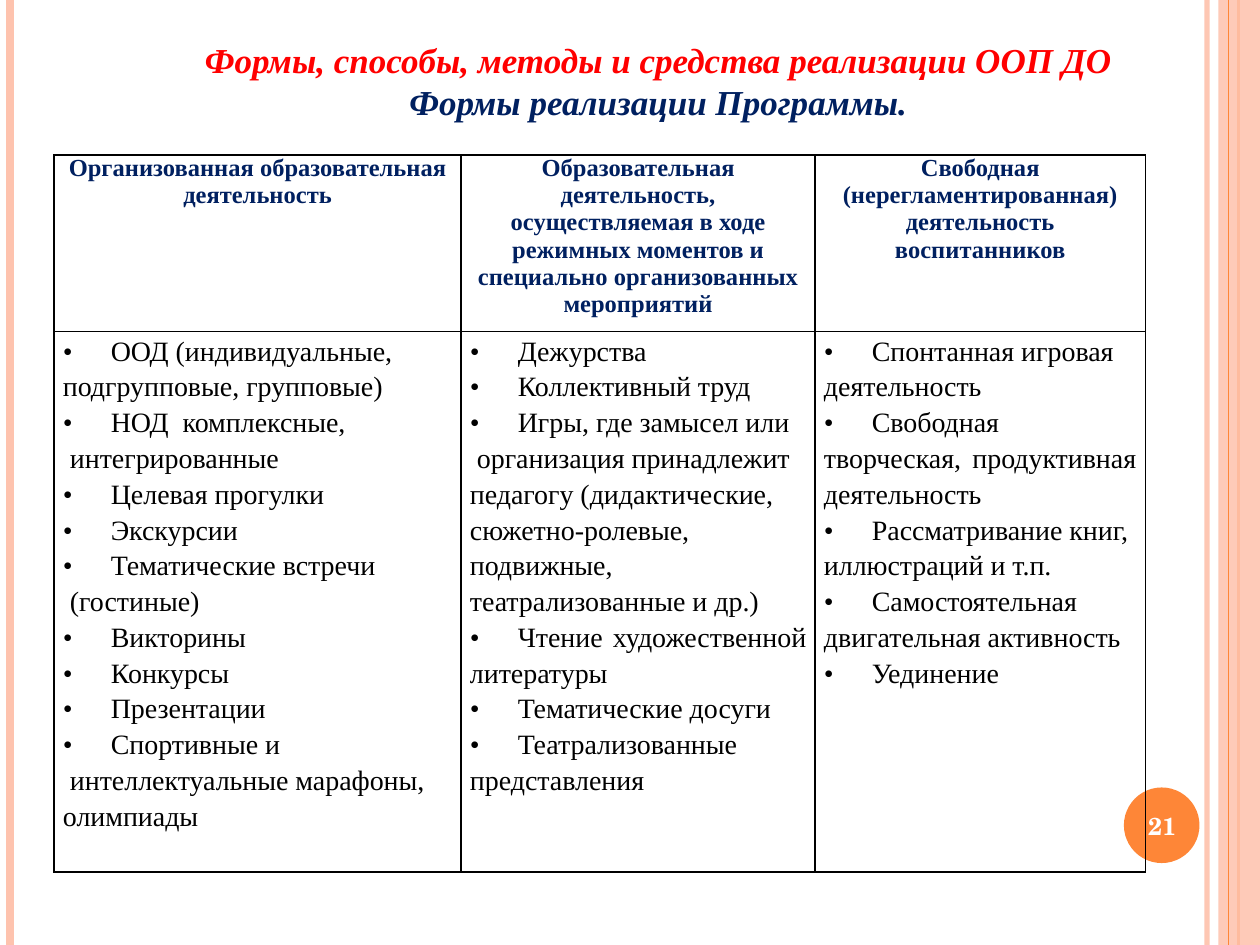
from lxml import etree
from pptx import Presentation
from pptx import util as u
from pptx.dml.color import RGBColor
from pptx.enum import shapes, text
from pptx.oxml import ns

PEACH = RGBColor(0xFE, 0xC3, 0xAE)
ORANGE = RGBColor(0xFE, 0x86, 0x37)
RED = RGBColor(0xFF, 0x00, 0x00)
NAVY = RGBColor(0x00, 0x20, 0x60)
BLACK = RGBColor(0x00, 0x00, 0x00)
WHITE = RGBColor(0xFF, 0xFF, 0xFF)
SERIF = "Times New Roman"
NUMBER_FONT = "TeX Gyre Schola"
BULLET = "• "

TITLE_LINES = [
    ("Формы, способы, методы и средства реализации ООП ДО", RED),
    ("Формы реализации Программы.", NAVY),
]
HEADERS = [
    "Организованная образовательная деятельность",
    "Образовательная деятельность, осуществляемая в ходе режимных моментов "
    "и специально организованных мероприятий",
    "Свободная (нерегламентированная) деятельность воспитанников",
]
# A line that starts with a bullet opens an item; the others continue it.
ACTIVITIES = [
    ["• ООД (индивидуальные,", "подгрупповые, групповые)",
     "• НОД  комплексные,", " интегрированные",
     "• Целевая прогулки", "• Экскурсии ",
     "• Тематические встречи", " (гостиные)",
     "• Викторины", "• Конкурсы", "• Презентации ",
     "• Спортивные и", " интеллектуальные марафоны,", "олимпиады "],
    ["• Дежурства ", "• Коллективный труд",
     "• Игры, где замысел или", " организация принадлежит",
     "педагогу (дидактические,", "сюжетно-ролевые,", "подвижные,",
     "театрализованные и др.)",
     "• Чтение художественной ", "литературы",
     "• Тематические досуги", "• Театрализованные", "представления"],
    ["• Спонтанная игровая ", "деятельность",
     "• Свободная ", "творческая, продуктивная ", "деятельность",
     "• Рассматривание книг, ", "иллюстраций и т.п.",
     "• Самостоятельная ", "двигательная активность",
     "• Уединение"],
]


def add_child(parent, tag, **attributes):
    return etree.SubElement(parent, ns.qn(tag), attributes)


def set_opacity(color_format_owner, percent):
    """Add an alpha value to the solid colour found inside an element."""
    color = color_format_owner.find(".//" + ns.qn("a:srgbClr"))
    add_child(color, "a:alpha", val=str(percent * 1000))


def set_hanging_indent(paragraph, bulleted):
    properties = paragraph._p.get_or_add_pPr()
    indent = u.Inches(0.38)
    properties.set("marL", str(indent))
    properties.set("indent", str(-indent))
    if bulleted:
        add_child(properties, "a:buFont", typeface=SERIF)
        add_child(properties, "a:buChar", char=BULLET.strip())
    else:
        add_child(properties, "a:buNone")


def set_borders(cell, color, width):
    properties = cell._tc.get_or_add_tcPr()
    for position, side in enumerate(("a:lnL", "a:lnR", "a:lnT", "a:lnB")):
        line = etree.Element(ns.qn(side), w=str(u.Pt(width)))
        add_child(add_child(line, "a:solidFill"), "a:srgbClr", val=str(color))
        properties.insert(position, line)


class SlideBuilder:
    def __init__(self, slide, font=SERIF):
        self.slide = slide
        self.font = font

    def run(self, paragraph, words, size, color, bold=False, italic=False, font=None):
        run = paragraph.add_run()
        run.text = words
        run.font.name = font or self.font
        run.font.size = u.Pt(size)
        run.font.color.rgb = color
        run.font.bold = bold
        run.font.italic = italic

    def title(self, lines, left, top, width, height):
        shape = self.slide.shapes.title
        shape.left, shape.top = u.Inches(left), u.Inches(top)
        shape.width, shape.height = u.Inches(width), u.Inches(height)
        frame = shape.text_frame
        frame.auto_size = text.MSO_AUTO_SIZE.NONE
        frame.vertical_anchor = text.MSO_ANCHOR.MIDDLE
        for index, (words, color) in enumerate(lines):
            paragraph = frame.add_paragraph() if index else frame.paragraphs[0]
            paragraph.alignment = text.PP_ALIGN.CENTER
            paragraph.space_before = u.Pt(0)
            self.run(paragraph, words, 20, color, bold=True, italic=True)

    def stripe(self, x, color, width, opacity=100):
        line = self.slide.shapes.add_connector(
            shapes.MSO_CONNECTOR.STRAIGHT, u.Inches(x), 0, u.Inches(x), u.Inches(7.5))
        line.line.color.rgb = color
        line.line.width = u.Pt(width)
        properties = line._element.spPr
        if opacity < 100:
            set_opacity(properties, opacity)
        add_child(properties, "a:effectLst")

    def filled_shape(self, kind, left, top, width, height, color, opacity=100):
        shape = self.slide.shapes.add_shape(
            kind, u.Inches(left), u.Inches(top), u.Inches(width), u.Inches(height))
        shape.shadow.inherit = False
        shape.fill.solid()
        shape.fill.fore_color.rgb = color
        shape.line.fill.background()
        if opacity < 100:
            set_opacity(shape._element.spPr, opacity)

    def page_number(self, words, left, top, width, height):
        box = self.slide.shapes.add_textbox(
            u.Inches(left), u.Inches(top), u.Inches(width), u.Inches(height))
        frame = box.text_frame
        frame.word_wrap = True
        frame.vertical_anchor = text.MSO_ANCHOR.MIDDLE
        paragraph = frame.paragraphs[0]
        paragraph.alignment = text.PP_ALIGN.CENTER
        self.run(paragraph, words, 14, WHITE, bold=True, font=NUMBER_FONT)

    def table(self, left, top, column_widths, row_heights):
        table = self.slide.shapes.add_table(
            len(row_heights), len(column_widths), u.Inches(left), u.Inches(top),
            u.Inches(sum(column_widths)), u.Inches(sum(row_heights))).table
        table.first_row = table.horz_banding = False
        for column, width in zip(table.columns, column_widths):
            column.width = u.Inches(width)
        for row, height in zip(table.rows, row_heights):
            row.height = u.Inches(height)
        for cell in table.iter_cells():
            cell.margin_left = cell.margin_right = u.Inches(0.07)
            cell.margin_top = cell.margin_bottom = 0
            cell.fill.background()
            set_borders(cell, BLACK, 1)
        return table

    def header_cell(self, cell, words):
        paragraph = cell.text_frame.paragraphs[0]
        paragraph.alignment = text.PP_ALIGN.CENTER
        self.run(paragraph, words, 14, NAVY, bold=True)

    def list_cell(self, cell, lines):
        frame = cell.text_frame
        for index, line in enumerate(lines):
            paragraph = frame.add_paragraph() if index else frame.paragraphs[0]
            paragraph.alignment = text.PP_ALIGN.JUSTIFY
            paragraph.line_spacing = 1.15
            set_hanging_indent(paragraph, line.startswith(BULLET))
            self.run(paragraph, line.removeprefix(BULLET), 16, BLACK)


def main():
    presentation = Presentation()
    presentation.slide_width = u.Inches(10)
    presentation.slide_height = u.Inches(7.5)
    title_only = presentation.slide_layouts[5]
    builder = SlideBuilder(presentation.slides.add_slide(title_only))

    builder.stripe(9.58, PEACH, 3, opacity=93)
    builder.stripe(0.08, PEACH, 4.5)
    builder.stripe(9.83, ORANGE, 1.5)
    builder.filled_shape(shapes.MSO_SHAPE.RECTANGLE, 9.67, 0, 0.33, 7.5, PEACH, opacity=87)
    builder.stripe(9.75, ORANGE, 0.75)
    builder.filled_shape(shapes.MSO_SHAPE.OVAL, 8.92, 6.25, 0.6, 0.6, ORANGE)
    builder.page_number("21", 8.89, 6.27, 0.67, 0.57)

    table = builder.table(0.43, 1.23, [3.23, 2.81, 2.62], [1.4, 4.22])
    for column, (header, lines) in enumerate(zip(HEADERS, ACTIVITIES)):
        builder.header_cell(table.cell(0, column), header)
        builder.list_cell(table.cell(1, column), lines)

    builder.title(TITLE_LINES, 0.45, 0.23, 9.55, 0.82)
    presentation.save("out.pptx")


if __name__ == "__main__":
    main()
